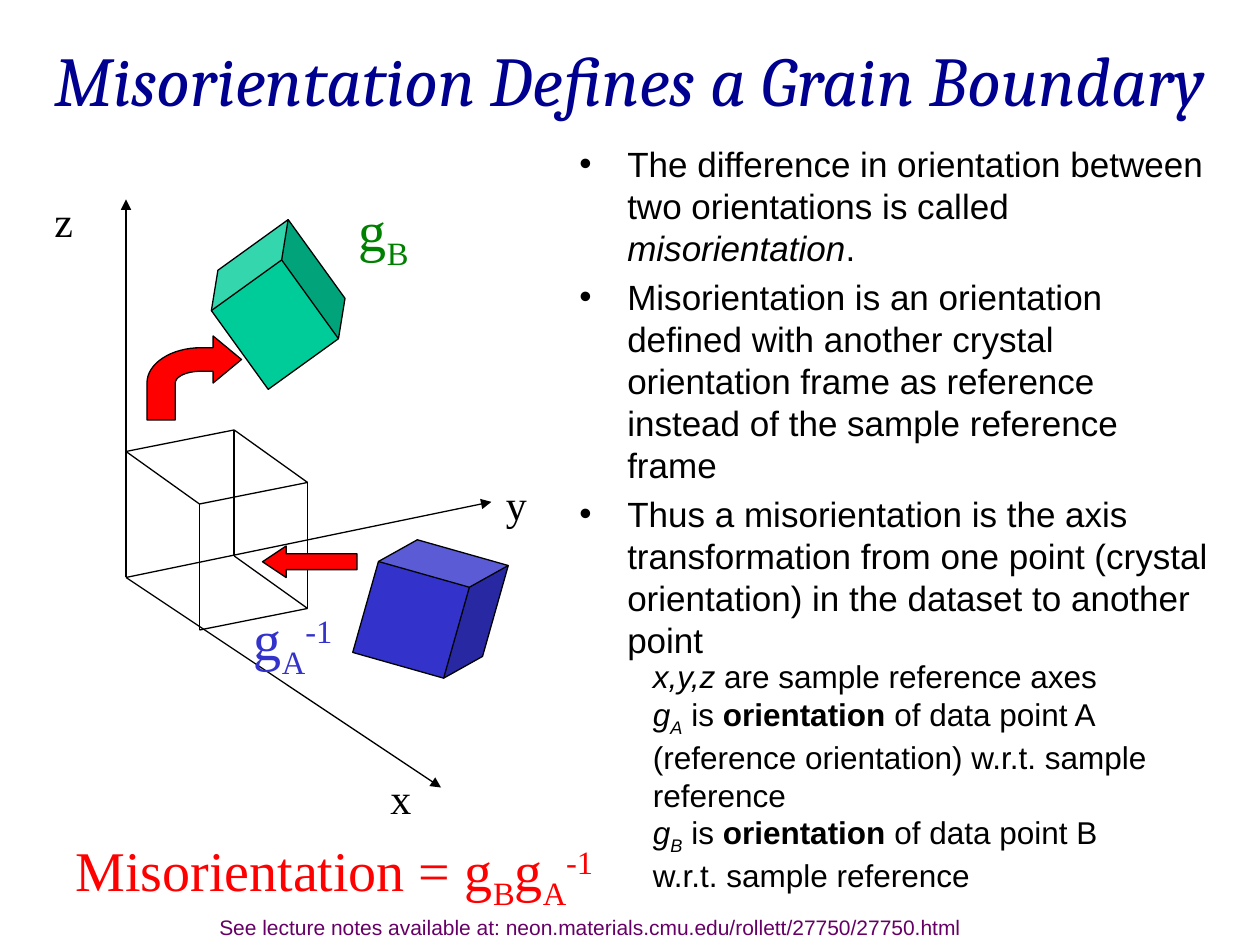
from itertools import product
from math import cos, pi, sin

from lxml.etree import SubElement
from pptx import Presentation
from pptx.dml.color import RGBColor
from pptx.enum.shapes import MSO_CONNECTOR, MSO_SHAPE
from pptx.enum.text import MSO_ANCHOR, MSO_AUTO_SIZE, PP_ALIGN
from pptx.oxml.ns import qn
from pptx.util import Inches, Pt

BLACK = RGBColor(0x00, 0x00, 0x00)
NAVY = RGBColor(0x00, 0x00, 0x90)
BLUE = RGBColor(0x33, 0x33, 0xCC)
TEAL = RGBColor(0x00, 0xCC, 0x99)
GREEN = RGBColor(0x00, 0x80, 0x00)
RED = RGBColor(0xFF, 0x00, 0x00)
PURPLE = RGBColor(0x66, 0x00, 0x66)

SERIF = "Times New Roman"
SANS = "Arial"
ITALIC = {"italic": True}
BOLD = {"bold": True}
SUB, SUPER = -25000, 30000
COLUMNS, ROWS = 120, 90
UNIT = Inches(10) // COLUMNS


def grid(*cells):
    return [round(cell * UNIT) for cell in cells]


def add_runs(paragraph, runs, color, **formats):
    for text, changes, *baseline in runs:
        run = paragraph.add_run()
        run.text = text
        for key, value in {**formats, **changes}.items():
            setattr(run.font, key, value)
        run.font.color.rgb = color
        if baseline:
            run._r.get_or_add_rPr().set("baseline", str(baseline[0]))


def add_text(slide, box, paragraphs, color, wrap=False, **formats):
    frame = slide.shapes.add_textbox(*grid(*box)).text_frame
    frame.word_wrap = wrap
    frame.auto_size = MSO_AUTO_SIZE.SHAPE_TO_FIT_TEXT
    for index, runs in enumerate(paragraphs):
        paragraph = frame.add_paragraph() if index else frame.paragraphs[0]
        add_runs(paragraph, runs, color, **formats)
    return frame


def add_line(slide, start, end, arrow=False):
    line = slide.shapes.add_connector(MSO_CONNECTOR.STRAIGHT, *grid(*start, *end))
    line.line.color.rgb = BLACK
    line.line.width = Pt(0.75)
    if arrow:
        SubElement(line.line._get_or_add_ln(), qn("a:tailEnd"), type="triangle")
    SubElement(line._element.spPr, qn("a:effectLst"))


def paint(shape, color):
    shape.shadow.inherit = False
    shape.fill.solid()
    shape.fill.fore_color.rgb = color
    shape.line.color.rgb = BLACK
    shape.line.width = Pt(0.75)


def add_solid(slide, kind, box, color, adjustments, rotation=0):
    solid = slide.shapes.add_shape(kind, *grid(*box))
    for index, value in enumerate(adjustments):
        solid.adjustments[index] = value
    solid.rotation = rotation
    paint(solid, color)


def place_title(slide, box):
    title = slide.shapes.title
    title.left, title.top, title.width, title.height = grid(*box)
    title.text_frame.vertical_anchor = MSO_ANCHOR.MIDDLE
    paragraph = title.text_frame.paragraphs[0]
    paragraph.alignment = PP_ALIGN.CENTER
    add_runs(paragraph, [("Misorientation Defines a Grain Boundary", ITALIC)],
             NAVY, name="Cambria", size=Pt(40))


def place_definitions(slide, box):
    points = [
        [("The difference in orientation between two orientations is called ", {}),
         ("misorientation", ITALIC), (".", {})],
        [("Misorientation is an orientation defined with another crystal orientation "
          "frame as reference instead of the sample reference frame", {})],
        [("Thus a misorientation is the axis transformation from one point (crystal "
          "orientation) in the dataset to another point", {})],
    ]
    frame = add_text(slide, box, points, BLACK, True, name=SANS, size=Pt(20))
    frame.auto_size = MSO_AUTO_SIZE.NONE
    for index, paragraph in enumerate(frame.paragraphs):
        properties = paragraph._p.get_or_add_pPr()
        properties.set("marL", str(Inches(0.38)))
        properties.set("indent", str(-Inches(0.38)))
        SubElement(properties, qn("a:buFont"), typeface=SANS)
        SubElement(properties, qn("a:buChar"), char="•")
        if index:
            paragraph.space_before = Pt(4)


def place_legend(slide, box):
    meanings = [("A", "of data point A (reference orientation) w.r.t. sample reference"),
                ("B", "of data point B w.r.t. sample reference")]
    lines = [[("x,y,z", ITALIC), (" are sample reference axes", {})]]
    lines += [[("g", ITALIC), (point, ITALIC, SUB), (" is ", {}),
               ("orientation ", BOLD), (meaning, {})] for point, meaning in meanings]
    add_text(slide, box, lines, BLACK, True, name=SANS, size=Pt(18))


def place_axes(slide, box):
    left, top, width, height = box
    origin = (left, top + 36)
    arrows = [(left + 30, top + height), (left + width, top + 28.8), (left, top)]
    for tip in arrows:
        add_line(slide, origin, tip, arrow=True)
    labels = {"x": (left + 24, top + 54, 4.4, 6),
              "z": (left - 8, top - 1, 4.2, 6),
              "y": (left + 35, top + 26, 4.4, 6)}
    for letter, label_box in labels.items():
        add_text(slide, label_box, [[(letter, {})]], BLACK, name=SERIF, size=Pt(24))
    place_reference_cube(slide, origin)


def place_reference_cube(slide, origin):
    steps = [(7, 5), (10.3, -2.05), (0, -12)]

    def project(corner):
        return [origin[i] + sum(c * step[i] for c, step in zip(corner, steps))
                for i in range(2)]

    for corner in product((0, 1), repeat=3):
        for axis in range(3):
            if any(corner) and not corner[axis]:
                neighbour = [c or i == axis for i, c in enumerate(corner)]
                add_line(slide, project(corner), project(neighbour))


def place_crystals(slide, box):
    left, top, width, height = box
    add_solid(slide, MSO_SHAPE.CUBE, (left + 8, top + 5, 11, 12), TEAL, [0.25], 324.2)
    add_solid(slide, MSO_SHAPE.CUBE, (left + width - 12, top + height - 12, 12, 12),
              BLUE, [0.25], 15.8)
    font = {"name": SERIF, "size": Pt(32)}
    add_text(slide, (left + 10, top + 39, 10.5, 7.5),
             [[("g", {}), ("A", {}, SUB), ("-1", {}, SUPER)]], BLUE, **font)
    add_text(slide, (left + 20, top, 7.5, 7.5),
             [[("g", {}), ("B", {}, SUB)]], GREEN, **font)
    place_bent_arrow(slide, (left + 1, top + 14, 9, 8))
    add_solid(slide, MSO_SHAPE.LEFT_ARROW, (left + 12, top + 34, 9, 3), RED, [0.5, 0.75])


def place_bent_arrow(slide, box):
    left, top, width, height = box
    neck, bend_x, bend_y = left + 0.7 * width, left + 0.57 * width, top + 0.56 * height

    def bend(radius_x, radius_y):
        angles = [pi / 2 * step / 16 for step in range(17)]
        return [(bend_x - radius_x * sin(a), bend_y - radius_y * cos(a)) for a in angles]

    outer = bend(0.57 * width, 0.42 * height)
    inner = bend(0.27 * width, 0.14 * height)
    head = [(left + width, top + 0.28 * height), (neck, top), (neck, outer[0][1])]
    foot = [(left, top + height), (inner[-1][0], top + height)]
    barb = [(neck, inner[0][1]), (neck, bend_y)]
    outline = [grid(*point) for point in head + outer + foot + inner[::-1] + barb]
    builder = slide.shapes.build_freeform(*outline[0])
    builder.add_line_segments(outline[1:], close=True)
    paint(builder.convert_to_shape(), RED)


def place_formula(slide, box):
    formula = [("Misorientation = g", {}), ("B", {}, SUB), ("g", {}),
               ("A", {}, SUB), ("-1", {}, SUPER)]
    add_text(slide, box, [formula], RED, name=SERIF, size=Pt(32))


def place_source_note(slide, box):
    note = "See lecture notes available at: neon.materials.cmu.edu/rollett/27750/27750.html"
    add_text(slide, box, [[(note, {})]], PURPLE, name=SANS, size=Pt(12))


def main():
    deck = Presentation()
    deck.slide_width, deck.slide_height = grid(COLUMNS, ROWS)
    slide = deck.slides.add_slide(deck.slide_layouts[5])
    place_title(slide, (0, 0, COLUMNS, 15))
    place_definitions(slide, (54, 13, 63, 64))
    place_axes(slide, (12, 19, 34.8, 56))
    place_crystals(slide, (13, 18, 34, 46))
    place_legend(slide, (61, 62, 50.8, 22.8))
    place_formula(slide, (6, 79, 52.5, 7.5))
    place_source_note(slide, (19.7, 86.5, 73.8, 3.6))
    deck.save("out.pptx")


if __name__ == "__main__":
    main()
